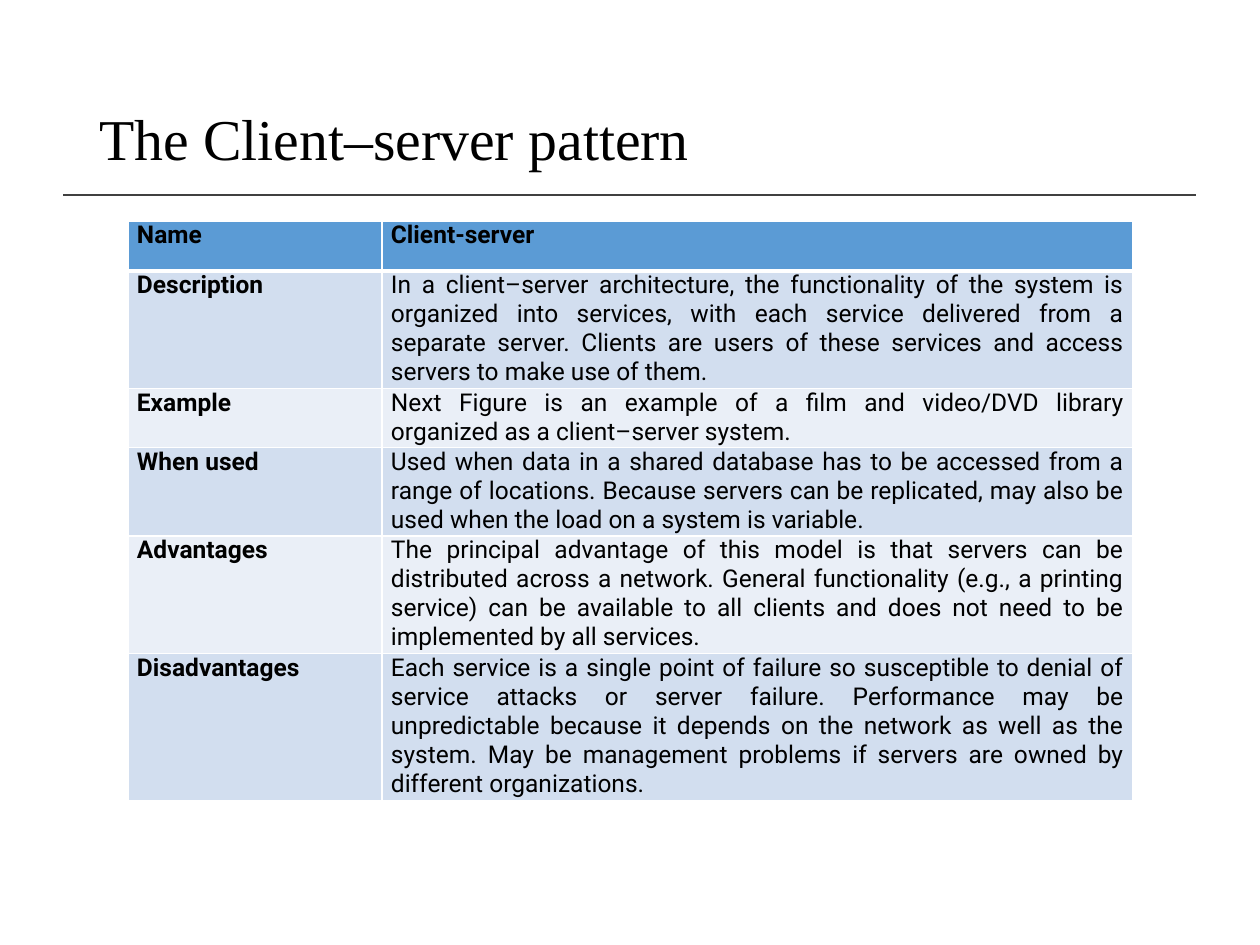
from dataclasses import dataclass

from lxml.etree import SubElement
from pptx import Presentation
from pptx.dml.color import RGBColor
from pptx.enum.shapes import MSO_CONNECTOR as Conn
from pptx.enum.text import MSO_ANCHOR as Anchor, PP_ALIGN as Align
from pptx.oxml import parse_xml
from pptx.oxml.ns import nsdecls, qn
from pptx.util import Pt

SCALE = 914400 / 126  # EMU per px
LINE = 29  # height of one text line, px
HEAD = 50  # height of the header row, px
LEFT, TOP = 128, 221
COLS = (254, 751)
BLUE, DARK, LIGHT = "5B9BD5", "D2DEEF", "EAEFF7"


@dataclass
class Row:
    name: str
    text: str
    lines: int


ROWS = [
    Row("Description", "In a client–server architecture, the functionality of the system "
        "is organized into services, with each service delivered from a separate server. "
        "Clients are users of these services and access servers to make use of them.", 4),
    Row("Example", "Next Figure is an example of a film and video/DVD library "
        "organized as a client–server system.", 2),
    Row("When used", "Used when data in a shared database has to be accessed from a range "
        "of locations. Because servers can be replicated, may also be used when the load "
        "on a system is variable.", 3),
    Row("Advantages", "The principal advantage of this model is that servers can be "
        "distributed across a network. General functionality (e.g., a printing service) "
        "can be available to all clients and does not need to be implemented by all "
        "services.", 4),
    Row("Disadvantages", "Each service is a single point of failure so susceptible to "
        "denial of service attacks or server failure. Performance may be unpredictable "
        "because it depends on the network as well as the system. May be management "
        "problems if servers are owned by different organizations.", 5),
]


def px(num: int) -> int:
    return round(num * SCALE)


def rgb(code: str) -> RGBColor:
    return RGBColor.from_string(code)


def write(para, text: str, **style) -> None:
    run = para.add_run()
    run.text = text
    run.font.color.rgb = rgb("000000")
    for key, val in style.items():
        setattr(run.font, key, val)


def border(cell, **widths: int) -> None:
    """Put white borders, in points, before the fill of the cell."""
    props = cell._tc.get_or_add_tcPr()
    for pos, side in enumerate("LRTB"):
        props.insert(pos, parse_xml(
            f'<a:ln{side} {nsdecls("a")} w="{Pt(widths.get(side, 1))}">'
            f'<a:solidFill><a:srgbClr val="FFFFFF"/></a:solidFill></a:ln{side}>'))


def fill_cell(cell, text: str, bold: bool, color: str, **widths: int) -> None:
    pads = {"margin_left": px(9), "margin_right": px(9),
            "margin_top": 0, "margin_bottom": 0}
    for key, val in pads.items():
        setattr(cell, key, val)
    cell.fill.solid()
    cell.fill.fore_color.rgb = rgb(color)
    border(cell, **widths)
    para = cell.text_frame.paragraphs[0]
    para.alignment = Align.JUSTIFY
    write(para, text, name="Roboto", size=Pt(14), bold=bold)


def add_title(slide, text: str) -> None:
    box = slide.shapes.add_textbox(px(87), px(50), px(1086), px(183))
    frame = box.text_frame
    frame.word_wrap = True
    frame.vertical_anchor = Anchor.MIDDLE
    para = frame.paragraphs[0]
    para.line_spacing = 0.9
    write(para, text, name="Times New Roman", size=Pt(33))


def add_rule(slide) -> None:
    rule = slide.shapes.add_connector(Conn.STRAIGHT, px(63), px(195), px(1196), px(195))
    rule.line.color.rgb = rgb("404040")
    rule.line.width = Pt(1)
    SubElement(rule._element.spPr, qn("a:effectLst"))


def add_grid(slide, rows: list[Row]) -> None:
    highs = [HEAD] + [row.lines * LINE for row in rows]
    grid = slide.shapes.add_table(len(highs), len(COLS), px(LEFT), px(TOP),
                                  px(sum(COLS)), px(sum(highs))).table
    grid.horz_banding = False
    for col, wide in zip(grid.columns, COLS):
        col.width = px(wide)
    for line, high in zip(grid.rows, highs):
        line.height = px(high)

    # Header row, set off by a thick border
    for cell, text in zip(grid.rows[0].cells, ("Name", "Client-server")):
        fill_cell(cell, text, True, BLUE, B=3)

    # Banded body rows
    for num, row in enumerate(rows, 1):
        color = DARK if num % 2 else LIGHT
        top = 3 if num == 1 else 1
        fill_cell(grid.cell(num, 0), row.name, True, color, T=top)
        fill_cell(grid.cell(num, 1), row.text, False, color, T=top)


def main() -> None:
    deck = Presentation()
    deck.slide_width, deck.slide_height = px(1260), px(945)
    slide = deck.slides.add_slide(deck.slide_layouts[6])
    add_rule(slide)
    add_title(slide, "The Client–server pattern")
    add_grid(slide, ROWS)
    deck.save("out.pptx")


if __name__ == "__main__":
    main()
